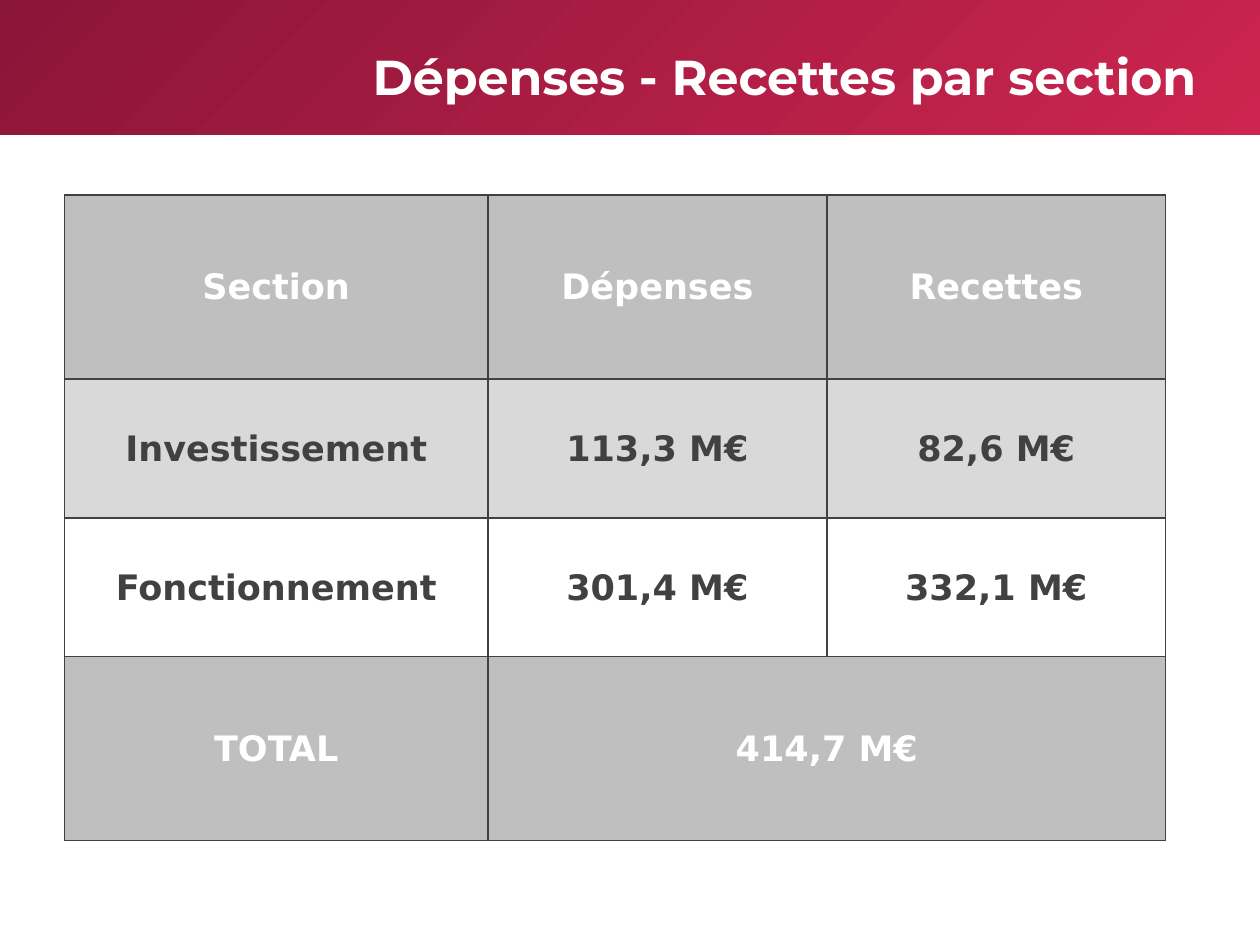
import lxml.etree
import pptx
import pptx.dml.color
import pptx.enum.shapes
import pptx.enum.text
import pptx.oxml.ns
import pptx.util
from pptx.util import Cm

COLORS = {
    "dark_red": "8A1538",
    "red": "CD254F",
    "white": "FFFFFF",
    "ink": "404143",
    "grey": "BFBFBF",
    "light_grey": "D9D9D9",
}

# Each row: height in cm, fill, text colour, texts (None joins the cell to its left)
ROWS = [
    (3.71, "grey", "white", ["Section", "Dépenses", "Recettes"]),
    (2.8, "light_grey", "ink", ["Investissement", "113,3 M€", "82,6 M€"]),
    (2.8, None, "ink", ["Fonctionnement", "301,4 M€", "332,1 M€"]),
    (3.71, "grey", "white", ["TOTAL", "414,7 M€", None]),
]
COLUMN_WIDTHS = [8.54, 6.83, 6.83]


def rgb(name):
    return pptx.dml.color.RGBColor.from_string(COLORS[name])


def write(tf, text, font="DejaVu Sans", size=20, color="white", bold=True):
    p = tf.paragraphs[0]
    p.alignment = pptx.enum.text.PP_ALIGN.CENTER
    r = p.add_run()
    r.text = text
    r.font.name = font
    r.font.size = pptx.util.Pt(size)
    r.font.bold = bold
    r.font.color.rgb = rgb(color)


def add_banner(s):
    sp = s.shapes.add_shape(
        pptx.enum.shapes.MSO_SHAPE.RECTANGLE, 0, 0, Cm(25.4), Cm(2.72))
    sp.shadow.inherit = False
    sp.line.fill.background()
    sp.fill.gradient()
    sp.fill.gradient_angle = 315
    for stop, name in zip(sp.fill.gradient_stops, ("dark_red", "red")):
        stop.color.rgb = rgb(name)


def add_title(s, text):
    sp = s.shapes.add_textbox(Cm(6.71), Cm(0.74), Cm(18.21), Cm(1.6))
    tf = sp.text_frame
    tf.word_wrap = True
    tf.vertical_anchor = pptx.enum.text.MSO_ANCHOR.MIDDLE
    write(tf, text, font="Montserrat", size=28)


def add_borders(cell, color, width=1):
    tc_pr = cell._tc.get_or_add_tcPr()
    qn = pptx.oxml.ns.qn
    for side in ("a:lnL", "a:lnR", "a:lnT", "a:lnB"):
        ln = lxml.etree.SubElement(tc_pr, qn(side), w=str(pptx.util.Pt(width)))
        fill = lxml.etree.SubElement(ln, qn("a:solidFill"))
        lxml.etree.SubElement(fill, qn("a:srgbClr"), val=COLORS[color])


def format_cell(cell, fill):
    """Set borders before the fill, as the schema orders them."""
    add_borders(cell, "ink")
    if fill:
        cell.fill.solid()
        cell.fill.fore_color.rgb = rgb(fill)
    else:
        cell.fill.background()
    cell.vertical_anchor = pptx.enum.text.MSO_ANCHOR.MIDDLE
    cell.margin_left = cell.margin_right = cell.margin_top = Cm(0.03)
    cell.margin_bottom = 0


def add_budget_table(s):
    width = sum(COLUMN_WIDTHS)
    height = sum(row[0] for row in ROWS)
    table = s.shapes.add_table(
        len(ROWS), len(COLUMN_WIDTHS),
        Cm(1.3), Cm(3.93), Cm(width), Cm(height)).table
    table.first_row = table.horz_banding = False
    for column, column_width in zip(table.columns, COLUMN_WIDTHS):
        column.width = Cm(column_width)
    for i, (row_height, fill, color, texts) in enumerate(ROWS):
        table.rows[i].height = Cm(row_height)
        for j, text in enumerate(texts):
            cell = table.cell(i, j)
            format_cell(cell, fill)
            if text is None:
                table.cell(i, j - 1).merge(cell)
            else:
                write(cell.text_frame, text, color=color)


def main():
    prs = pptx.Presentation()
    prs.slide_width, prs.slide_height = Cm(25.4), Cm(19.05)
    s = prs.slides.add_slide(prs.slide_layouts[6])
    add_banner(s)
    add_title(s, "Dépenses - Recettes par section")
    add_budget_table(s)
    prs.save("out.pptx")


if __name__ == "__main__":
    main()
